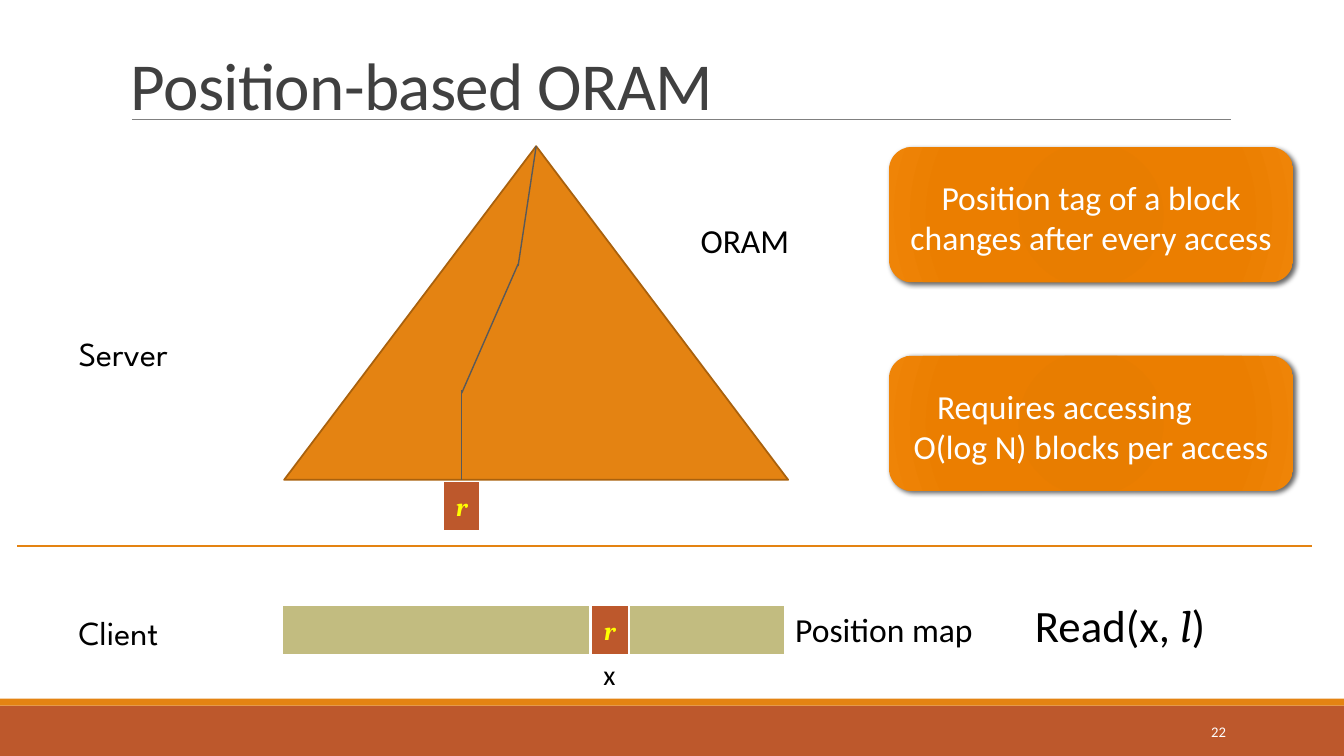
from lxml import etree
from pptx import Presentation
from pptx.dml.color import RGBColor
from pptx.enum import shapes, text
from pptx.oxml import parse_xml
from pptx.oxml.ns import nsdecls, qn
from pptx.util import Pt

COLORS = {
    "rust": "BD582C", "orange": "E48312", "outline": "A9610D", "khaki": "C2BC80",
    "white": "FFFFFF", "black": "000000", "yellow": "FFFF00", "title": "404040",
    "rule": "808080", "branch": "595959",
}
CARD_STOPS = [(0, "E57B00"), (34, "E87D00"), (70, "EB7E00"), (100, "EF8407")]
CARDS = [
    (105.1, [("Position tag of a block changes after every access", 0)]),
    (254.2, [("Requires accessing", 38), ("O(log N) blocks per access", 0)]),
]
LABELS = [
    ("x", (424, 466, 24.5, 31.5), "Calibri", 20),
    ("Position map", (560.9, 431.3, 142, 36.3), "Calibri", 24),
    ("Server", (49, 234, 93, 36.3), "League Spartan", 24),
    ("Client", (49, 433.4, 84, 36.3), "League Spartan", 24),
    ("ORAM", (493.3, 153.4, 78.5, 36.3), "Calibri", 24),
]
CALL = [("Read(x, ", "Calibri", False), ("l", "Cambria", True), (")", "Calibri", False)]
TAGS = [(316.1, 343.5), (421.9, 432)]
BRANCHES = [((383, 104.4), (370.1, 190)), ((370.1, 188.6), (329.8, 280.8)),
            ((329.8, 278.6), (329.8, 342.7))]
MAP_BAR = (200.9, 432, 360, 36)
TREE = (203, 104.4, 360, 238.3)
CARD_LEFT, CARD_W, CARD_H = 635, 288.7, 96.5

RECT = shapes.MSO_SHAPE.RECTANGLE
prs = Presentation()
prs.slide_width, prs.slide_height = Pt(960), Pt(540)
slide = prs.slides.add_slide(prs.slide_layouts[6])


def rgb(name):
    return RGBColor.from_string(COLORS[name])


def add_box(kind, box, fill=None, line=None, width=1):
    sp = slide.shapes.add_shape(kind, *map(Pt, box))
    sp.shadow.inherit = False
    if fill:
        sp.fill.solid()
        sp.fill.fore_color.rgb = rgb(fill)
    if line:
        sp.line.color.rgb = rgb(line)
        sp.line.width = Pt(width)
    else:
        sp.line.fill.background()
    return sp


def add_line(start, end, color, width):
    sp = slide.shapes.add_connector(shapes.MSO_CONNECTOR.STRAIGHT, *map(Pt, start + end))
    sp.line.color.rgb = rgb(color)
    sp.line.width = Pt(width)
    etree.SubElement(sp._element.spPr, qn("a:effectLst"))


def add_label(box, wrap=False, anchor=text.MSO_ANCHOR.TOP):
    tf = slide.shapes.add_textbox(*map(Pt, box)).text_frame
    tf.word_wrap = wrap
    tf.vertical_anchor = anchor
    return tf


def write(p, words, size=24, font="Calibri", color="black", bold=False, italic=False,
          align=text.PP_ALIGN.LEFT):
    p.alignment = align
    r = p.add_run()
    r.text = words
    r.font.name, r.font.size = font, Pt(size)
    r.font.bold, r.font.italic = bold, italic
    r.font.color.rgb = rgb(color)
    return r


def add_tag(left, top):
    tf = add_box(RECT, (left, top, 27.4, 36), "rust", "white", 2).text_frame
    tf.vertical_anchor = text.MSO_ANCHOR.MIDDLE
    write(tf.paragraphs[0], "r", size=18, font="Cambria", color="yellow", bold=True,
          italic=True, align=text.PP_ALIGN.CENTER)


def add_card(top, lines):
    sp = add_box(shapes.MSO_SHAPE.ROUNDED_RECTANGLE, (CARD_LEFT, top, CARD_W, CARD_H))
    stops = "".join(f'<a:gs pos="{pos * 1000}"><a:srgbClr val="{color}"/></a:gs>'
                    for pos, color in CARD_STOPS)
    sp._element.spPr.find(qn("a:prstGeom")).addnext(parse_xml(
        f'<a:gradFill {nsdecls("a")} rotWithShape="1"><a:gsLst>{stops}</a:gsLst>'
        '<a:path path="circle"><a:fillToRect l="100000" t="100000" r="100000" b="100000"/>'
        '</a:path></a:gradFill>'))
    sp._element.spPr.find(qn("a:effectLst")).append(parse_xml(
        f'<a:outerShdw {nsdecls("a")} blurRad="{Pt(3.5)}" dist="{Pt(2)}" dir="2700000">'
        '<a:srgbClr val="000000"><a:alpha val="60000"/></a:srgbClr></a:outerShdw>'))
    tf = sp.text_frame
    tf.word_wrap = True
    tf.vertical_anchor = text.MSO_ANCHOR.MIDDLE
    tf.margin_top = Pt(7.2)
    for i, (words, right_indent) in enumerate(lines):
        p = tf.add_paragraph() if i else tf.paragraphs[0]
        write(p, words, color="white", align=text.PP_ALIGN.CENTER)
        p._p.get_or_add_pPr().set("marR", str(Pt(right_indent)))


add_box(RECT, (0, 504, 960, 36), "rust")
add_line((94.3, 85), (879.1, 85), "rule", 0.5)
add_box(RECT, (0, 499, 960, 5), "orange")

p = add_label((86.4, -22.3, 792, 114.5), True, text.MSO_ANCHOR.BOTTOM).paragraphs[0]
p.line_spacing = 0.85
r = write(p, "Position-based ORAM", size=48, color="title")
r._r.get_or_add_rPr().set("spc", "-50")
tf = add_label((779.8, 508.3, 103, 28.8), True, text.MSO_ANCHOR.MIDDLE)
write(tf.paragraphs[0], "22", size=10.5, color="white", align=text.PP_ALIGN.RIGHT)

add_box(RECT, MAP_BAR, "khaki", "white", 2)
for left, top in TAGS:
    add_tag(left, top)
add_box(shapes.MSO_SHAPE.ISOSCELES_TRIANGLE, TREE, "orange", "outline", 1.25)
add_line((12.2, 390), (937.4, 390), "orange", 1)
for start, end in BRANCHES:
    add_line(start, end, "branch", 1)
for words, box, font, size in LABELS:
    write(add_label(box).paragraphs[0], words, size=size, font=font)
p = add_label((732.2, 423.4, 138.2, 46)).paragraphs[0]
for words, font, italic in CALL:
    write(p, words, size=32, font=font, italic=italic)
for top, lines in CARDS:
    add_card(top, lines)

prs.save("out.pptx")
